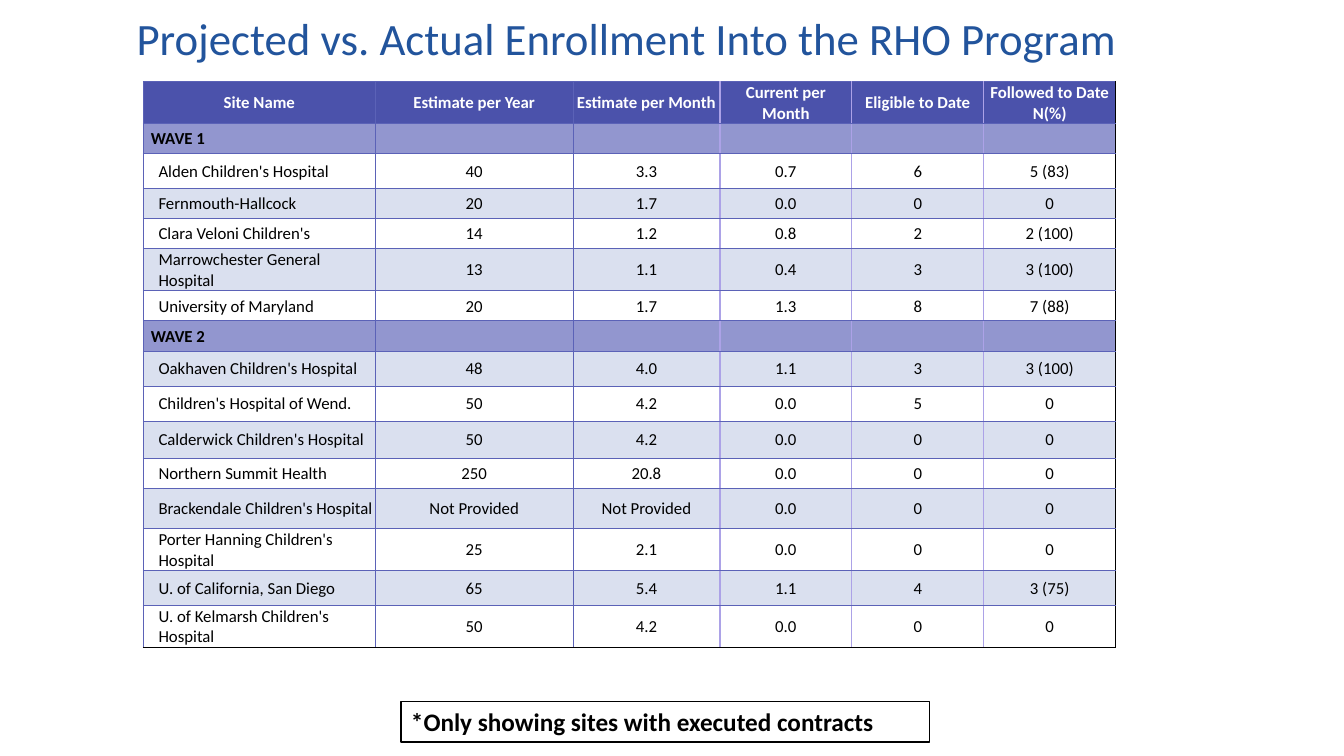
import pptx
import pptx.util
import pptx.dml.color
import pptx.enum.shapes
import pptx.enum.text
import pptx.oxml.ns
from lxml import etree

Pt = pptx.util.Pt
ALIGN = pptx.enum.text.PP_ALIGN
MIDDLE = pptx.enum.text.MSO_ANCHOR.MIDDLE

# Content
TITLE = "Projected vs. Actual Enrollment Into the RHO Program"
NOTE = "*Only showing sites with executed contracts"
HEADINGS = ("Site Name", "Estimate per Year", "Estimate per Month",
            "Current per Month", "Eligible to Date", "Followed to Date\nN(%)")
# Each wave: name, then sites with row height in points
WAVES = [
    ("WAVE 1", [
        (25, "Alden Children's Hospital", "40", "3.3", "0.7", "6", "5 (83)"),
        (21.5, "Fernmouth-Hallcock", "20", "1.7", "0.0", "0", "0"),
        (21.5, "Clara Veloni Children's", "14", "1.2", "0.8", "2", "2 (100)"),
        (30, "Marrowchester General Hospital", "13", "1.1", "0.4", "3", "3 (100)"),
        (21.5, "University of Maryland", "20", "1.7", "1.3", "8", "7 (88)"),
    ]),
    ("WAVE 2", [
        (25, "Oakhaven Children's Hospital", "48", "4.0", "1.1", "3", "3 (100)"),
        (25, "Children's Hospital of Wend.", "50", "4.2", "0.0", "5", "0"),
        (26.5, "Calderwick Children's Hospital", "50", "4.2", "0.0", "0", "0"),
        (22, "Northern Summit Health", "250", "20.8", "0.0", "0", "0"),
        (28.5, "Brackendale Children's Hospital", "Not Provided", "Not Provided",
         "0.0", "0", "0"),
        (30, "Porter Hanning Children's Hospital", "25", "2.1", "0.0", "0", "0"),
        (25, "U. of California, San Diego", "65", "5.4", "1.1", "4", "3 (75)"),
        (30, "U. of Kelmarsh Children's Hospital", "50", "4.2", "0.0", "0", "0"),
    ]),
]

THEME = {
    "font": "Calibri", "title_size": 32, "table_size": 12, "note_size": 18,
    "title": "22549C", "header": "4B52AB", "wave": "9296CF", "tint": "DAE0EF",
    "white": "FFFFFF", "black": "000000", "grid": "5B62B7", "lilac": "ACA2E7",
}
HEADER_HEIGHT, WAVE_HEIGHT = 30, 21.5
COLUMN_WIDTHS = (166, 141, 105, 94.25, 94.25, 94.25)
TABLE_LEFT, TABLE_TOP = 102.25, 58.25


def color(name):
    return pptx.dml.color.RGBColor.from_string(THEME[name])


def write(frame, text, size, ink, bold=False, align=ALIGN.LEFT):
    frame.text = text
    frame.word_wrap = True
    for para in frame.paragraphs:
        para.alignment = align
        for span in para.runs:
            span.font.name = THEME["font"]
            span.font.size = Pt(THEME[size])
            span.font.bold = bold
            span.font.color.rgb = color(ink)


def set_borders(cell, edges):
    properties = cell._tc.get_or_add_tcPr()
    for place, (side, ink, width) in enumerate(edges):
        line = etree.Element(pptx.oxml.ns.qn("a:ln" + side), w=str(Pt(width)))
        fill = etree.SubElement(line, pptx.oxml.ns.qn("a:solidFill"))
        etree.SubElement(fill, pptx.oxml.ns.qn("a:srgbClr"), val=THEME[ink])
        properties.insert(place, line)


# Rows as (height, texts, fill, ink, bold, left inset); sites alternate across waves
rows = [(HEADER_HEIGHT, HEADINGS, "header", "white", True, 0.75)]
site_count = 0
for wave, sites in WAVES:
    rows.append((WAVE_HEIGHT, (wave,) + ("",) * 5, "wave", "black", True, 5.5))
    for height, *texts in sites:
        fill = "tint" if site_count % 2 else "white"
        rows.append((height, texts, fill, "black", False, 11))
        site_count += 1

deck = pptx.Presentation()
deck.slide_width, deck.slide_height = Pt(960), Pt(540)
page = deck.slides.add_slide(deck.slide_layouts[6])

# Title
box = page.shapes.add_textbox(Pt(46.8), Pt(0), Pt(802), Pt(59))
write(box.text_frame, TITLE, "title_size", "title", align=ALIGN.CENTER)
box.text_frame.vertical_anchor = MIDDLE
box.text_frame.paragraphs[0].line_spacing = 0.9

# Enrollment table
table = page.shapes.add_table(
    len(rows), len(COLUMN_WIDTHS), Pt(TABLE_LEFT), Pt(TABLE_TOP),
    Pt(sum(COLUMN_WIDTHS)), Pt(sum(row[0] for row in rows))).table
table.first_row = table.horz_banding = False
for column, width in zip(table.columns, COLUMN_WIDTHS):
    column.width = Pt(width)

grid, lilac, outer = ("grid", 0.5), ("lilac", 1), ("black", 0.5)
uprights = [grid] * 3 + [lilac] * 3 + [outer]
levels = [grid] * len(rows) + [outer]
for r, (height, texts, fill, ink, bold, inset) in enumerate(rows):
    table.rows[r].height = Pt(height)
    for c, text in enumerate(texts):
        cell = table.cell(r, c)
        left_aligned = c == 0 and r > 0
        write(cell.text_frame, text, "table_size", ink, bold,
              ALIGN.LEFT if left_aligned else ALIGN.CENTER)
        cell.vertical_anchor = MIDDLE
        cell.margin_left = Pt(inset if left_aligned else 0.75)
        cell.margin_top = cell.margin_right = Pt(0.75)
        cell.margin_bottom = Pt(0)
        cell.fill.solid()
        cell.fill.fore_color.rgb = color(fill)
        set_borders(cell, [("L", *uprights[c]), ("R", *uprights[c + 1]),
                           ("T", *levels[r]), ("B", *levels[r + 1])])
        if not text:  # keeps empty cells from stretching the row
            etree.SubElement(cell.text_frame.paragraphs[0]._p,
                             pptx.oxml.ns.qn("a:endParaRPr"),
                             sz=str(THEME["table_size"] * 100))

# Note below the table
note = page.shapes.add_shape(pptx.enum.shapes.MSO_SHAPE.RECTANGLE,
                             Pt(286.5), Pt(501), Pt(377.3), Pt(29))
note.shadow.inherit = False
note.fill.solid()
note.fill.fore_color.rgb = color("white")
note.line.color.rgb = color("black")
note.line.width = Pt(1)
write(note.text_frame, NOTE, "note_size", "black", True)
note.text_frame.vertical_anchor = pptx.enum.text.MSO_ANCHOR.TOP

deck.save("out.pptx")
